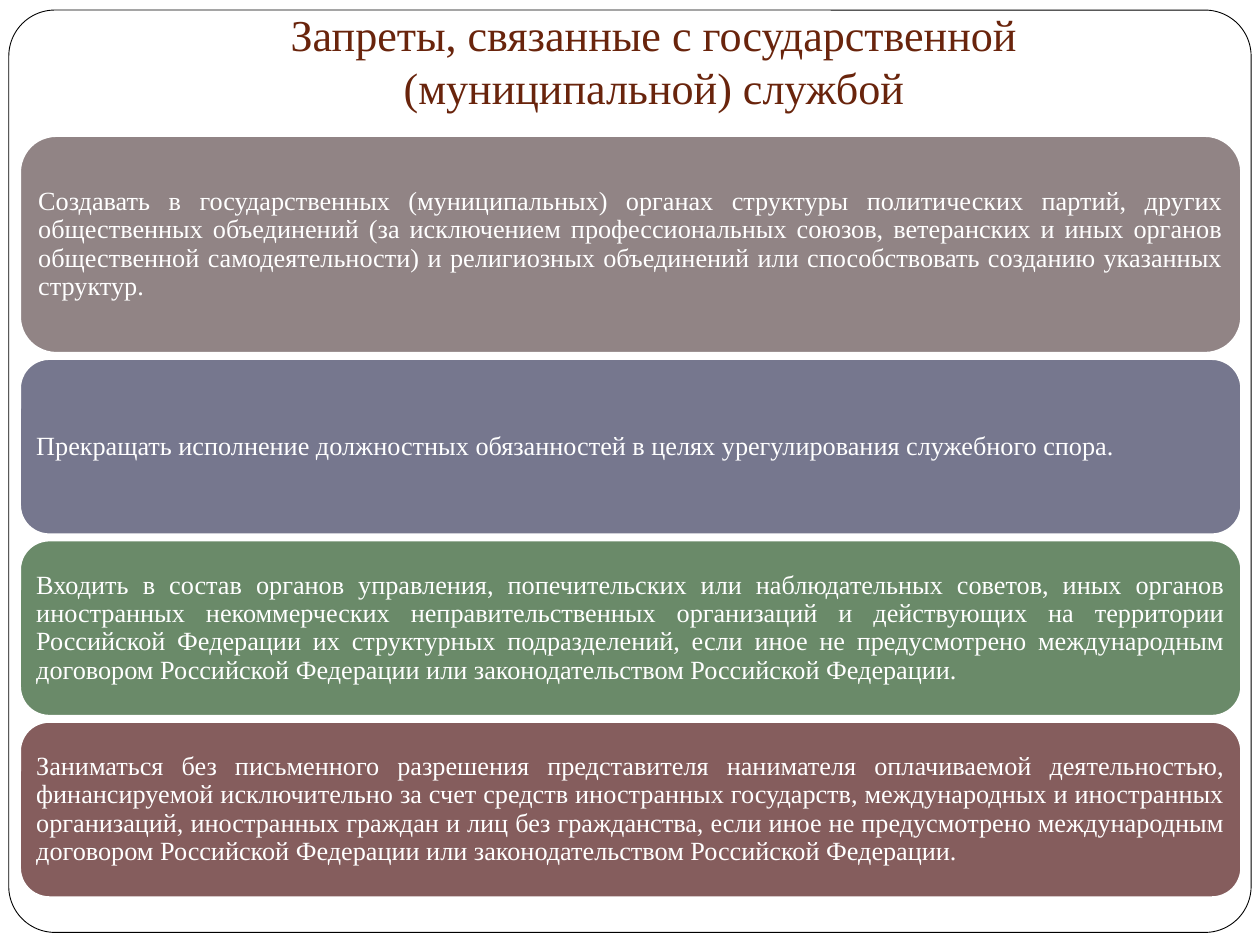
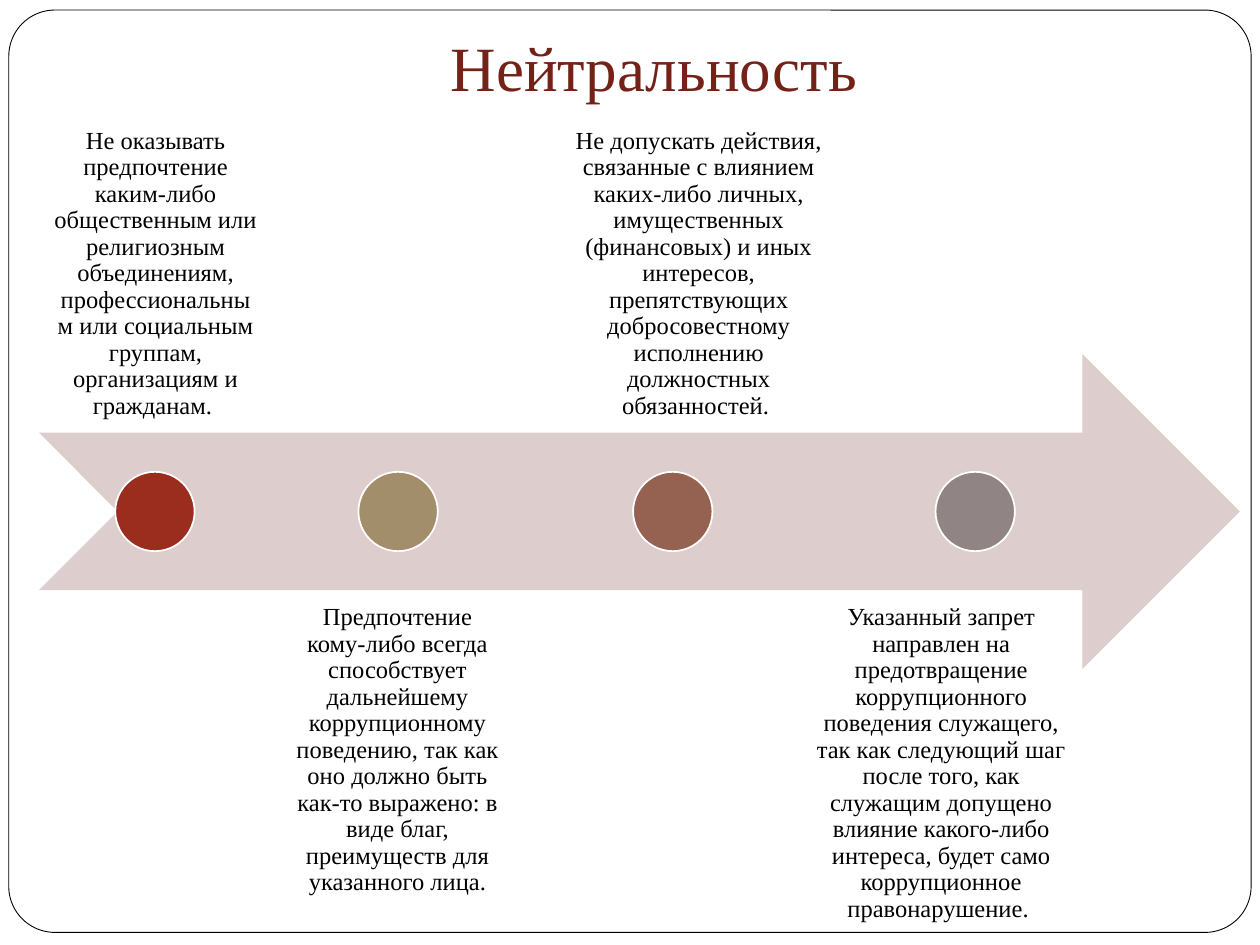
from dataclasses import dataclass

from lxml import etree
from pptx import Presentation
from pptx import util as u
from pptx.dml.color import RGBColor
from pptx.enum import shapes, text
from pptx.oxml import ns
from pptx.shapes.autoshape import Shape
from pptx.slide import Slide
from pptx.text.text import TextFrame


@dataclass(frozen=True)
class Theme:
    font: str = "Times New Roman"
    white: str = "FFFFFF"
    black: str = "000000"
    brown: str = "69240C"
    maroon: str = "742217"
    red: str = "9B2D1F"
    sand: str = "A28E6A"
    clay: str = "956251"
    taupe: str = "918485"
    slate: str = "76778E"
    green: str = "6A8A69"
    wine: str = "855D5D"
    blush: str = "DECDCD"
    card_size: float = 15
    label_size: float = 14
    line_spacing: float = 0.9


THEME = Theme()


@dataclass(frozen=True)
class Box:
    left: float
    top: float
    width: float
    height: float

    def lengths(self) -> tuple[u.Length, ...]:
        return tuple(u.Inches(v) for v in (self.left, self.top, self.width, self.height))


@dataclass(frozen=True)
class Card:
    height: float
    fill: str
    words: str


@dataclass(frozen=True)
class Step:
    dot_center: float
    fill: str
    label_left: float
    label_width: float
    words: str


# Content
CARD_LEFT, CARD_TOP, CARD_WIDTH, CARD_GAP = 0.16, 1.08, 9.69, 0.05
CARDS = [
    Card(1.72, THEME.taupe,
         "Создавать в государственных (муниципальных) органах структуры политических партий, "
         "других общественных объединений (за исключением профессиональных союзов, ветеранских "
         "и иных органов общественной самодеятельности) и религиозных объединений или "
         "способствовать созданию указанных структур."),
    Card(1.39, THEME.slate,
         "Прекращать исполнение должностных обязанностей в целях урегулирования служебного спора."),
    Card(1.39, THEME.green,
         "Входить в состав органов управления, попечительских или наблюдательных советов, иных "
         "органов иностранных некоммерческих неправительственных организаций и действующих на "
         "территории Российской Федерации их структурных подразделений, если иное не "
         "предусмотрено международным договором Российской Федерации или законодательством "
         "Российской Федерации."),
    Card(1.39, THEME.wine,
         "Заниматься без письменного разрешения представителя нанимателя оплачиваемой "
         "деятельностью, финансируемой исключительно за счет средств иностранных государств, "
         "международных и иностранных организаций, иностранных граждан и лиц без гражданства, "
         "если иное не предусмотрено международным договором Российской Федерации или "
         "законодательством Российской Федерации."),
]

ARROW = Box(0.31, 2.81, 9.53, 2.5)
DOT_SIZE = 0.63
LABEL_HEIGHT, LABEL_TOPS = 2.5, (0.94, 4.69)  # above and below the arrow
STEPS = [
    Step(1.23, THEME.red, 0.32, 1.83,
         "Не оказывать предпочтение каким-либо общественным или религиозным объединениям, "
         "профессиональным или социальным группам, организациям и гражданам. "),
    Step(3.16, THEME.sand, 2.24, 1.83,
         "Предпочтение кому-либо всегда способствует дальнейшему коррупционному поведению, "
         "так как оно должно быть как-то выражено: в виде благ, преимуществ для указанного лица."),
    Step(5.34, THEME.clay, 4.37, 2.35,
         "Не допускать действия, связанные с влиянием каких-либо личных, имущественных "
         "(финансовых) и иных интересов, препятствующих добросовестному исполнению "
         "должностных обязанностей. "),
    Step(7.74, THEME.taupe, 6.33, 2.28,
         "Указанный запрет направлен на предотвращение коррупционного поведения служащего, "
         "так как следующий шаг после того, как служащим допущено влияние какого-либо "
         "интереса, будет само коррупционное правонарушение. "),
]


# Shared drawing
def write(frame: TextFrame, words: str, size: float, color: str, align: text.PP_ALIGN,
          anchor: text.MSO_ANCHOR, insets: tuple[float, float, float, float],
          line_spacing: float = 1.0) -> None:
    """Fill a text frame; insets run left, top, right, bottom."""
    frame.text = words
    frame.word_wrap = True
    frame.auto_size = text.MSO_AUTO_SIZE.NONE
    frame.vertical_anchor = anchor
    frame.margin_left, frame.margin_top, frame.margin_right, frame.margin_bottom = (
        u.Inches(inset) for inset in insets)
    para = frame.paragraphs[0]
    para.alignment = align
    para.line_spacing = line_spacing
    para.space_before = para.space_after = u.Pt(0)
    para.font.name = THEME.font
    para.font.size = u.Pt(size)
    para.font.color.rgb = RGBColor.from_string(color)


def add_figure(page: Slide, preset: shapes.MSO_SHAPE, box: Box, fill: str,
               line: str | None = None, line_width: float = 1) -> Shape:
    figure = page.shapes.add_shape(preset, *box.lengths())
    figure.shadow.inherit = False
    figure.fill.solid()
    figure.fill.fore_color.rgb = RGBColor.from_string(fill)
    if line is None:
        figure.line.fill.background()
    else:
        figure.line.color.rgb = RGBColor.from_string(line)
        figure.line.width = u.Pt(line_width)
    return figure


def add_page(deck: Presentation, heading: str, box: Box, size: float, color: str) -> Slide:
    """Add a slide with the rounded page frame behind its title."""
    page = deck.slides.add_slide(deck.slide_layouts[5])
    title = page.shapes.title
    title.left, title.top, title.width, title.height = box.lengths()
    write(title.text_frame, heading, size, color, text.PP_ALIGN.CENTER,
          text.MSO_ANCHOR.BOTTOM, (0.1, 0.05, 0.1, 0.1))
    frame = add_figure(page, shapes.MSO_SHAPE.ROUNDED_RECTANGLE, Box(0.07, 0.08, 9.86, 7.32),
                       THEME.white, THEME.black, 0.5)
    frame.adjustments[0] = 0.05
    title.element.addprevious(frame.element)
    return page


# Slides
def add_bans_page(deck: Presentation) -> None:
    page = add_page(deck, "Запреты, связанные с государственной (муниципальной) службой",
                    Box(0.94, 0.31, 8.5, 0.69), 25.2, THEME.brown)
    top = CARD_TOP
    for card in CARDS:
        panel = add_figure(page, shapes.MSO_SHAPE.ROUNDED_RECTANGLE,
                           Box(CARD_LEFT, top, CARD_WIDTH, card.height), card.fill, THEME.white)
        write(panel.text_frame, card.words, THEME.card_size, THEME.white,
              text.PP_ALIGN.JUSTIFY, text.MSO_ANCHOR.MIDDLE, (0.06,) * 4, THEME.line_spacing)
        top += card.height + CARD_GAP


def add_neutrality_page(deck: Presentation) -> None:
    page = add_page(deck, "Нейтральность", Box(0.94, 0.16, 8.5, 0.77), 36, THEME.maroon)
    add_figure(page, shapes.MSO_SHAPE.NOTCHED_RIGHT_ARROW, ARROW, THEME.blush)
    dot_top = ARROW.top + (ARROW.height - DOT_SIZE) / 2
    anchors = (text.MSO_ANCHOR.BOTTOM, text.MSO_ANCHOR.TOP)
    for index, step in enumerate(STEPS):
        side = index % 2
        label_box = Box(step.label_left, LABEL_TOPS[side], step.label_width, LABEL_HEIGHT)
        label = page.shapes.add_textbox(*label_box.lengths())
        write(label.text_frame, step.words, THEME.label_size, THEME.black,
              text.PP_ALIGN.CENTER, anchors[side], (0.11,) * 4, THEME.line_spacing)
        add_figure(page, shapes.MSO_SHAPE.OVAL,
                   Box(step.dot_center - DOT_SIZE / 2, dot_top, DOT_SIZE, DOT_SIZE),
                   step.fill, THEME.white)


def main() -> None:
    deck = Presentation()
    deck.slide_width, deck.slide_height = u.Inches(10), u.Inches(7.5)
    add_bans_page(deck)
    add_neutrality_page(deck)
    deck.save("out.pptx")


if __name__ == "__main__":
    main()
